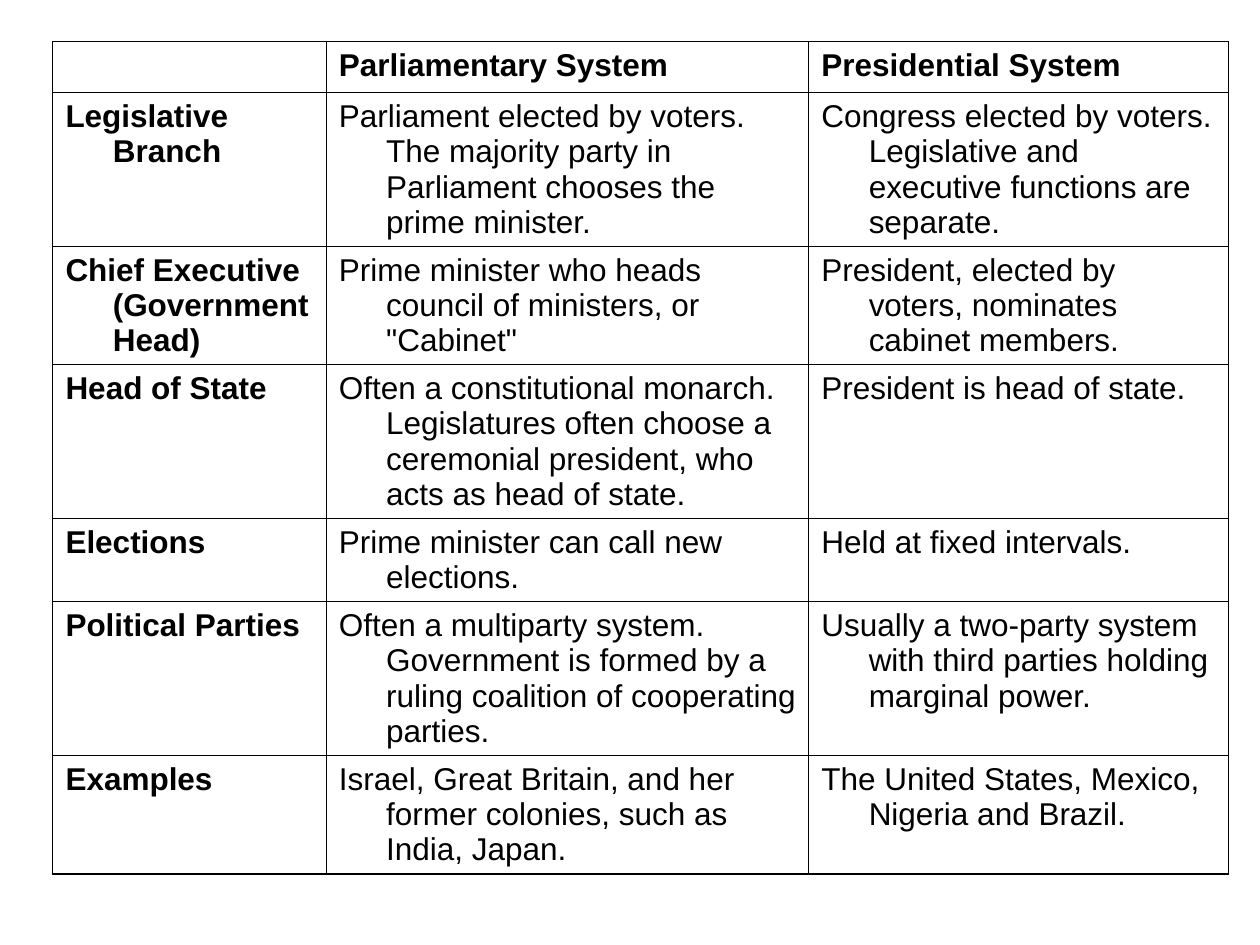
from lxml import etree
from pptx import Presentation
from pptx import util as u
from pptx.dml.color import RGBColor
from pptx.oxml.ns import qn

BLACK = RGBColor(0x00, 0x00, 0x00)
FONT = "Arial"
HANGING_INDENT = u.Inches(3 / 8)
COLUMN_WIDTHS = (2.17, 3.83, 3.33)
ROW_HEIGHTS = (0.4, 0.7, 0.7, 0.7, 0.4, 0.7, 0.2)
COMPARISON = (
    ("", "Parliamentary System", "Presidential System"),
    ("Legislative Branch",
     "Parliament elected by voters. The majority party in Parliament chooses the prime minister.",
     "Congress elected by voters. Legislative and executive functions are separate."),
    ("Chief Executive\n(Government Head)",
     "Prime minister who heads council of ministers, or \"Cabinet\"",
     "President, elected by voters, nominates cabinet members."),
    ("Head of State",
     "Often a constitutional monarch. Legislatures often choose a ceremonial president, "
     "who acts as head of state.",
     "President is head of state."),
    ("Elections",
     "Prime minister can call new elections.",
     "Held at fixed intervals."),
    ("Political Parties",
     "Often a multiparty system. Government is formed by a ruling coalition of cooperating parties.",
     "Usually a two-party system with third parties holding marginal power."),
    ("Examples",
     "Israel, Great Britain, and her former colonies, such as India, Japan.",
     "The United States, Mexico, Nigeria and Brazil."),
)


def add_borders(cell):
    """Draw a thin black line on every side of a cell."""
    properties = cell._tc.get_or_add_tcPr()
    for position, side in enumerate(("lnL", "lnR", "lnT", "lnB")):
        line = etree.Element(qn(f"a:{side}"), w=str(u.Pt(0.75)))
        fill = etree.SubElement(line, qn("a:solidFill"))
        etree.SubElement(fill, qn("a:srgbClr"), val=str(BLACK))
        properties.insert(position, line)


def fill_cell(cell, wording, bold):
    """Write a cell's wording with a hanging indent."""
    cell.fill.background()
    add_borders(cell)
    paragraph = cell.text_frame.paragraphs[0]
    paragraph.text = wording
    properties = paragraph._p.get_or_add_pPr()
    properties.set("marL", str(HANGING_INDENT))
    properties.set("indent", str(-HANGING_INDENT))
    for run in paragraph.runs:
        run.font.name = FONT
        run.font.size = u.Pt(18)
        run.font.bold = bold
        run.font.color.rgb = BLACK


def add_comparison_table(slide, left, top):
    """Place the table of government systems at the given corner."""
    frame = slide.shapes.add_table(
        len(COMPARISON), len(COLUMN_WIDTHS), left, top,
        u.Inches(sum(COLUMN_WIDTHS)), u.Inches(sum(ROW_HEIGHTS)))
    table = frame.table
    table.horz_banding = False
    table.first_row = False
    for column, width in zip(table.columns, COLUMN_WIDTHS):
        column.width = u.Inches(width)
    for row, height in zip(table.rows, ROW_HEIGHTS):
        row.height = u.Inches(height)
    for row_index, wordings in enumerate(COMPARISON):
        for column_index, wording in enumerate(wordings):
            heading = row_index == 0 or column_index == 0
            fill_cell(table.cell(row_index, column_index), wording, heading)


def main():
    """Build and save the presentation."""
    presentation = Presentation()
    presentation.slide_width = u.Inches(10)
    presentation.slide_height = u.Inches(7.5)
    slide = presentation.slides.add_slide(presentation.slide_layouts[6])
    add_comparison_table(slide, u.Inches(0.42), u.Inches(0.33))
    presentation.save("out.pptx")


if __name__ == "__main__":
    main()
